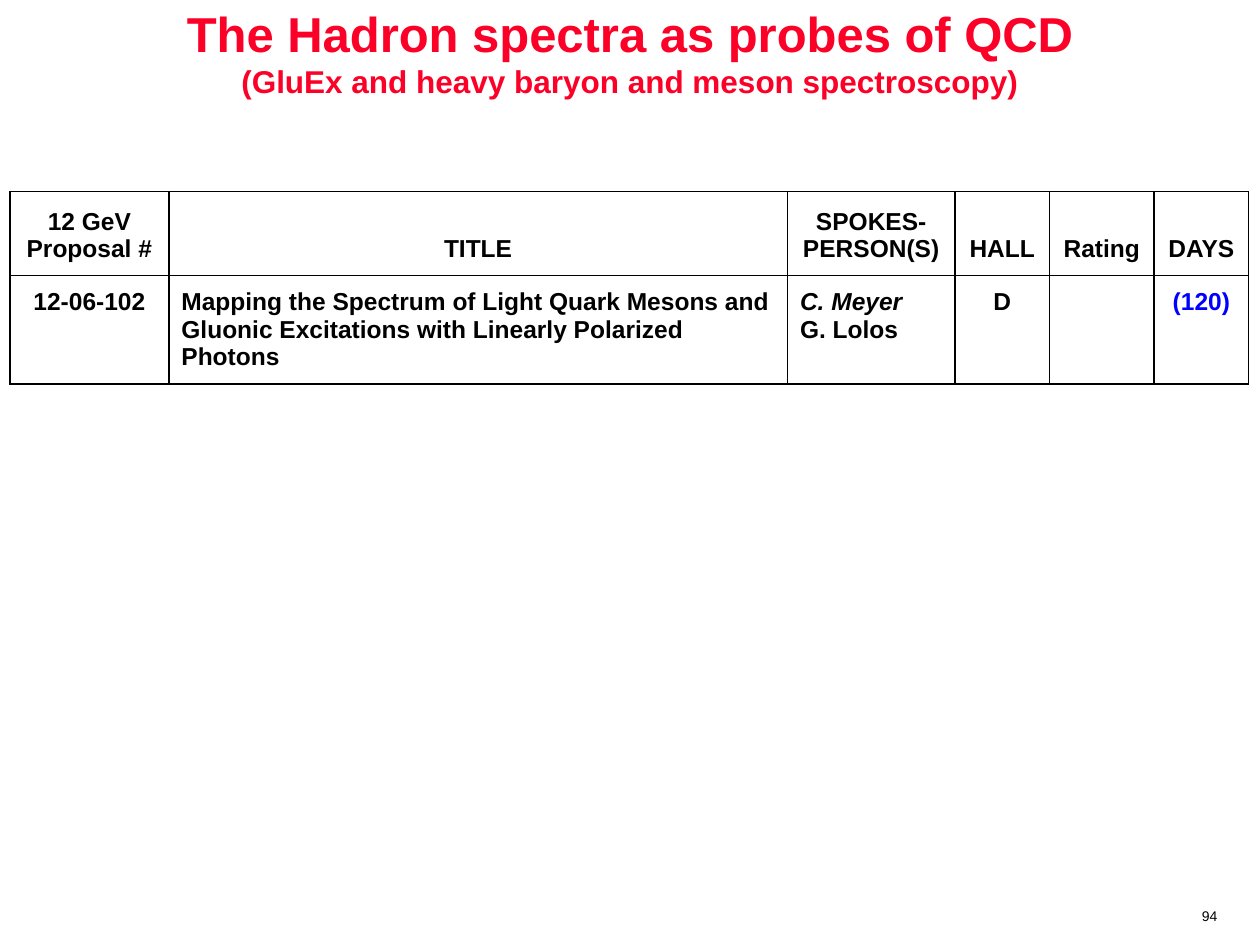
import pptx
import pptx.util
import pptx.dml.color
import pptx.enum.text
import pptx.oxml
import pptx.oxml.ns
from pptx.util import Inches

RGB = pptx.dml.color.RGBColor.from_string
ALIGN = pptx.enum.text.PP_ALIGN
ANCHOR = pptx.enum.text.MSO_ANCHOR

theme = {
    "font": "Arial",
    "ink": "000000", "red": "FC0128", "blue": "0000FF",
    "head": 28, "sub": 18, "body": 14, "page": 8,
}


def style(run, size, color="ink", bold=True):
    font = run.font
    font.name = theme["font"]
    font.size = pptx.util.Pt(theme[size])
    font.color.rgb = RGB(theme[color])
    font.bold = bold


def border(cell):
    props = cell._tc.get_or_add_tcPr()
    for side in ("lnL", "lnR", "lnT", "lnB"):
        props.append(pptx.oxml.parse_xml(
            f'<a:{side} {pptx.oxml.ns.nsdecls("a")} w="{pptx.util.Pt(1)}">'
            f'<a:solidFill><a:srgbClr val="{theme["ink"]}"/></a:solidFill>'
            f'</a:{side}>'))


deck = pptx.Presentation()
deck.slide_width, deck.slide_height = Inches(10), Inches(7.5)
slide = deck.slides.add_slide(deck.slide_layouts[6])

# Title
box = slide.shapes.add_textbox(Inches(0), Inches(0), Inches(10), Inches(0.82))
frame = box.text_frame
frame.word_wrap = True
frame.vertical_anchor = ANCHOR.MIDDLE
para = frame.paragraphs[0]
para.text = ("The Hadron spectra as probes of QCD\v"
             "(GluEx and heavy baryon and meson spectroscopy)")
para.alignment = ALIGN.CENTER
for run, size in zip(para.runs, ("head", "sub")):
    style(run, size, "red")

# Proposal table
rows = [
    ["12 GeV Proposal #", "TITLE", "SPOKES-PERSON(S)", "HALL", "Rating", "DAYS"],
    ["12-06-102",
     "Mapping the Spectrum of Light Quark Mesons and Gluonic Excitations "
     "with Linearly Polarized Photons",
     "C. Meyer\nG. Lolos", "D", "", "(120)"],
]
wide = [1.26, 4.91, 1.33, 0.75, 0.83, 0.75]
high = [0.64, 0.86]
table = slide.shapes.add_table(
    len(rows), len(wide), Inches(0.08), Inches(1.52),
    Inches(sum(wide)), Inches(sum(high))).table
table.first_row = table.horz_banding = False
for col, width in zip(table.columns, wide):
    col.width = Inches(width)
for row, height in zip(table.rows, high):
    row.height = Inches(height)

for r, row in enumerate(rows):
    for c, text in enumerate(row):
        cell = table.cell(r, c)
        border(cell)
        cell.fill.background()
        cell.margin_left = cell.margin_right = Inches(0.1)
        cell.margin_top = cell.margin_bottom = Inches(0.1)
        cell.vertical_anchor = ANCHOR.TOP if r else ANCHOR.BOTTOM
        cell.text_frame.text = text
        for para in cell.text_frame.paragraphs:
            para.alignment = ALIGN.LEFT if r and c in (1, 2) else ALIGN.CENTER
            if r:
                para.line_spacing = pptx.util.Pt(15.8)
            for run in para.runs:
                style(run, "body", "blue" if r and c == 5 else "ink")

# The lead spokesperson is in italics
table.cell(1, 2).text_frame.paragraphs[0].runs[0].font.italic = True

# Page number
box = slide.shapes.add_textbox(
    Inches(9.43), Inches(7.18), Inches(0.34), Inches(0.21))
frame = box.text_frame
frame.word_wrap = False
frame.text = "94"
para = frame.paragraphs[0]
para.alignment = ALIGN.CENTER
para.line_spacing = 0.8
style(para.runs[0], "page", bold=False)

deck.save("out.pptx")
